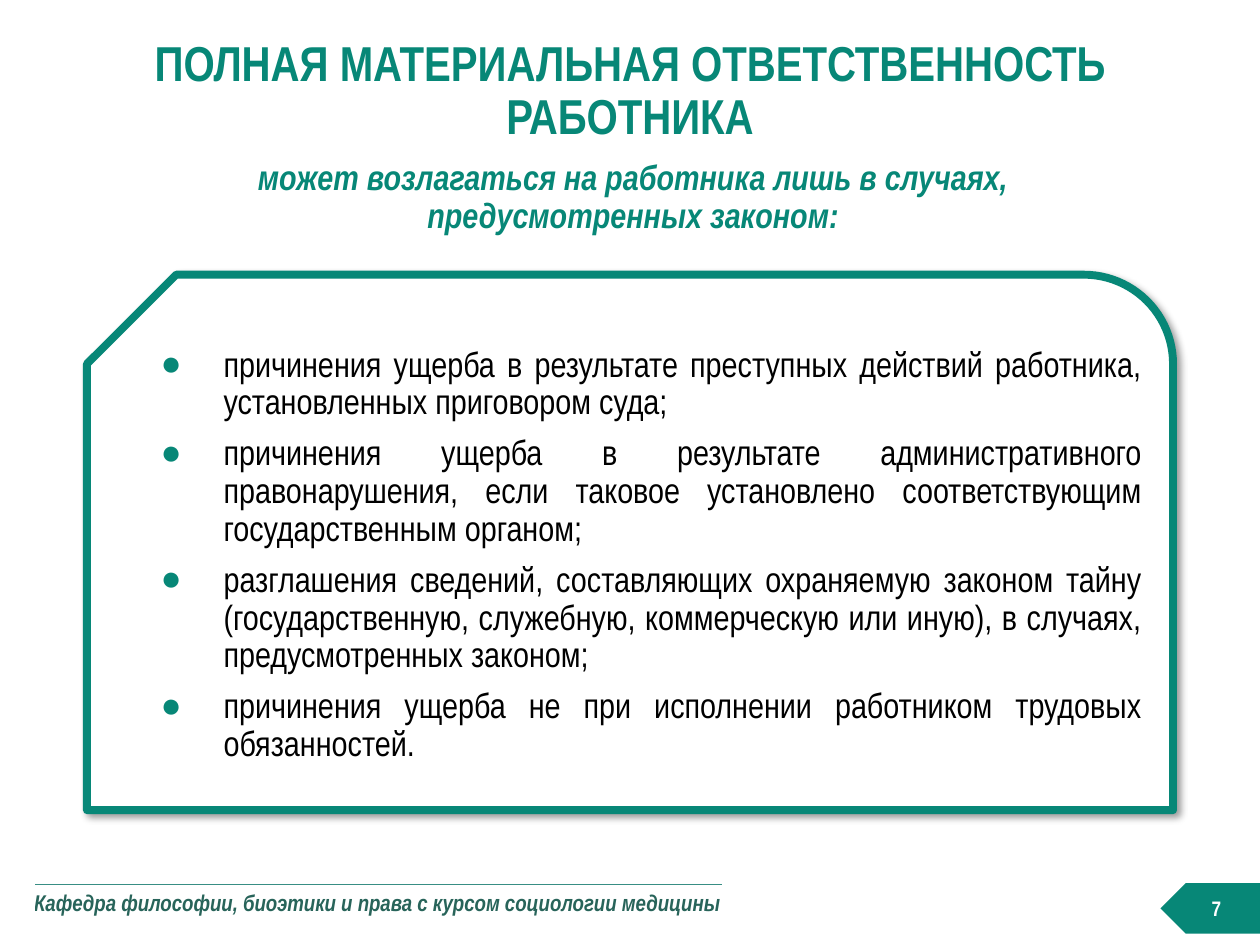
from dataclasses import dataclass

import pptx
import pptx.dml.color
import pptx.enum.shapes
import pptx.enum.text
import pptx.oxml
import pptx.oxml.ns
import pptx.util

Inches, Pt = pptx.util.Inches, pptx.util.Pt
RGBColor = pptx.dml.color.RGBColor
Align = pptx.enum.text.PP_ALIGN
Anchor = pptx.enum.text.MSO_ANCHOR
Preset = pptx.enum.shapes.MSO_SHAPE
NS = pptx.oxml.ns.nsdecls("a")


@dataclass(frozen=True)
class Theme:
    font: str = "Arial Narrow"
    accent: str = "078777"
    rule: str = "388E84"
    department: str = "28645A"
    ink: str = "000000"
    paper: str = "FFFFFF"
    title_size: float = 28
    text_size: float = 20
    department_size: float = 13
    number_size: float = 12
    outline: float = 4.5


THEME = Theme()


@dataclass(frozen=True)
class Box:
    left: float
    top: float
    width: float
    height: float

    def emu(self) -> tuple:
        return tuple(Inches(v) for v in (self.left, self.top, self.width, self.height))


@dataclass(frozen=True)
class Style:
    size: float
    color: str
    bold: bool = False
    italic: bool = False
    align: Align = Align.CENTER
    line_spacing: float = 1.0
    space_before: float = 0
    bullet: str = ""


TITLE = Style(THEME.title_size, THEME.accent, bold=True, line_spacing=0.9)
SUBTITLE = Style(THEME.text_size, THEME.accent, bold=True, italic=True, line_spacing=0.9)
CASE = Style(THEME.text_size, THEME.ink, align=Align.JUSTIFY, line_spacing=0.9,
             space_before=7.5, bullet="●")
DEPARTMENT = Style(THEME.department_size, THEME.department, bold=True, italic=True,
                   align=Align.LEFT)
NUMBER = Style(THEME.number_size, THEME.paper, bold=True)

CASES = (
    "причинения ущерба в результате преступных действий работника, "
    "установленных приговором суда;",
    "причинения ущерба в результате административного правонарушения, "
    "если таковое установлено соответствующим государственным органом;",
    "разглашения сведений, составляющих охраняемую законом тайну (государственную, "
    "служебную, коммерческую или иную), в случаях, предусмотренных законом;",
    "причинения ущерба не при исполнении работником трудовых обязанностей.",
)


def add_bullet(paragraph, char: str) -> None:
    props = paragraph._p.get_or_add_pPr()
    props.set("marL", str(Inches(0.69)))
    props.set("indent", str(Inches(-0.5)))
    for xml in (f'<a:buClr {NS}><a:srgbClr val="{THEME.accent}"/></a:buClr>',
                f'<a:buFont {NS} typeface="Arial"/>',
                f'<a:buChar {NS} char="{char}"/>'):
        props.append(pptx.oxml.parse_xml(xml))


def write(frame, texts: tuple, style: Style) -> None:
    for index, text in enumerate(texts):
        paragraph = frame.add_paragraph() if index else frame.paragraphs[0]
        paragraph.text = text
        if style.bullet:
            add_bullet(paragraph, style.bullet)
        paragraph.alignment = style.align
        paragraph.line_spacing = style.line_spacing
        paragraph.space_before = Pt(style.space_before if index else 0)
        font = paragraph.font
        font.name, font.size = THEME.font, Pt(style.size)
        font.bold, font.italic = style.bold, style.italic
        font.color.rgb = RGBColor.from_string(style.color)


def set_frame(frame, anchor: Anchor, side: float, edge: float) -> None:
    frame.word_wrap = True
    frame.vertical_anchor = anchor
    frame.margin_left = frame.margin_right = Inches(side)
    frame.margin_top = frame.margin_bottom = Inches(edge)


def add_text(slide, box: Box, texts: tuple, style: Style, anchor: Anchor,
             side: float = 0, edge: float = 0) -> None:
    frame = slide.shapes.add_textbox(*box.emu()).text_frame
    set_frame(frame, anchor, side, edge)
    write(frame, texts, style)


def add_flipped(slide, preset: Preset, box: Box, fill: str, texts: tuple, style: Style,
                side: float, edge: float):
    shape = slide.shapes.add_shape(preset, *box.emu())
    shape.shadow.inherit = False
    shape._element.spPr.xfrm.set("flipH", "1")
    shape.fill.solid()
    shape.fill.fore_color.rgb = RGBColor.from_string(fill)
    shape.line.fill.background()
    set_frame(shape.text_frame, Anchor.MIDDLE, side, edge)
    write(shape.text_frame, texts, style)
    return shape


def add_shadow(shape) -> None:
    effects = shape._element.spPr.find(pptx.oxml.ns.qn("a:effectLst"))
    effects.append(pptx.oxml.parse_xml(
        f'<a:outerShdw {NS} blurRad="{Pt(4)}" dist="{Pt(3)}" dir="2700000" algn="tl" '
        f'rotWithShape="0"><a:srgbClr val="{THEME.ink}"><a:alpha val="40000"/>'
        '</a:srgbClr></a:outerShdw>'))


def add_department(slide, box: Box, text: str) -> None:
    table = slide.shapes.add_table(1, 1, *box.emu()).table
    table.first_row = table.horz_banding = False
    cell = table.cell(0, 0)
    cell.margin_left = cell.margin_right = cell.margin_bottom = 0
    cell.margin_top = Inches(0.08)
    cell.fill.background()
    write(cell.text_frame, (text,), DEPARTMENT)
    cell._tc.get_or_add_tcPr().insert(0, pptx.oxml.parse_xml(
        f'<a:lnT {NS} w="{Pt(1)}"><a:solidFill><a:srgbClr val="{THEME.rule}"/>'
        '</a:solidFill></a:lnT>'))


def main() -> None:
    deck = pptx.Presentation()
    deck.slide_width, deck.slide_height = Inches(10), Inches(7.5)
    slide = deck.slides.add_slide(deck.slide_layouts[6])

    # Footer with the department's name
    add_department(slide, Box(0.27, 7.02, 5.47, 0.43),
                   "Кафедра философии, биоэтики и права с курсом социологии медицины")

    # Title
    add_text(slide, Box(0.69, 0.4, 8.62, 0.66),
             ("ПОЛНАЯ МАТЕРИАЛЬНАЯ ОТВЕТСТВЕННОСТЬ РАБОТНИКА",), TITLE, Anchor.MIDDLE)

    # Framed list of cases
    cases = add_flipped(slide, Preset.SNIP_ROUND_RECTANGLE, Box(0.69, 2.18, 8.62, 4.25),
                        THEME.paper, CASES, CASE, side=0.04, edge=0)
    cases.line.color.rgb = RGBColor.from_string(THEME.accent)
    cases.line.width = Pt(THEME.outline)
    add_shadow(cases)

    # Page number
    add_flipped(slide, Preset.PENTAGON, Box(9.21, 7.01, 0.79, 0.4),
                THEME.accent, ("7",), NUMBER, side=0.1, edge=0.05)

    # Subtitle
    add_text(slide, Box(1.09, 1.23, 7.87, 0.87),
             ("может возлагаться на работника лишь в случаях, предусмотренных законом:",),
             SUBTITLE, Anchor.TOP, side=0.2, edge=0.04)

    deck.save("out.pptx")


if __name__ == "__main__":
    main()
